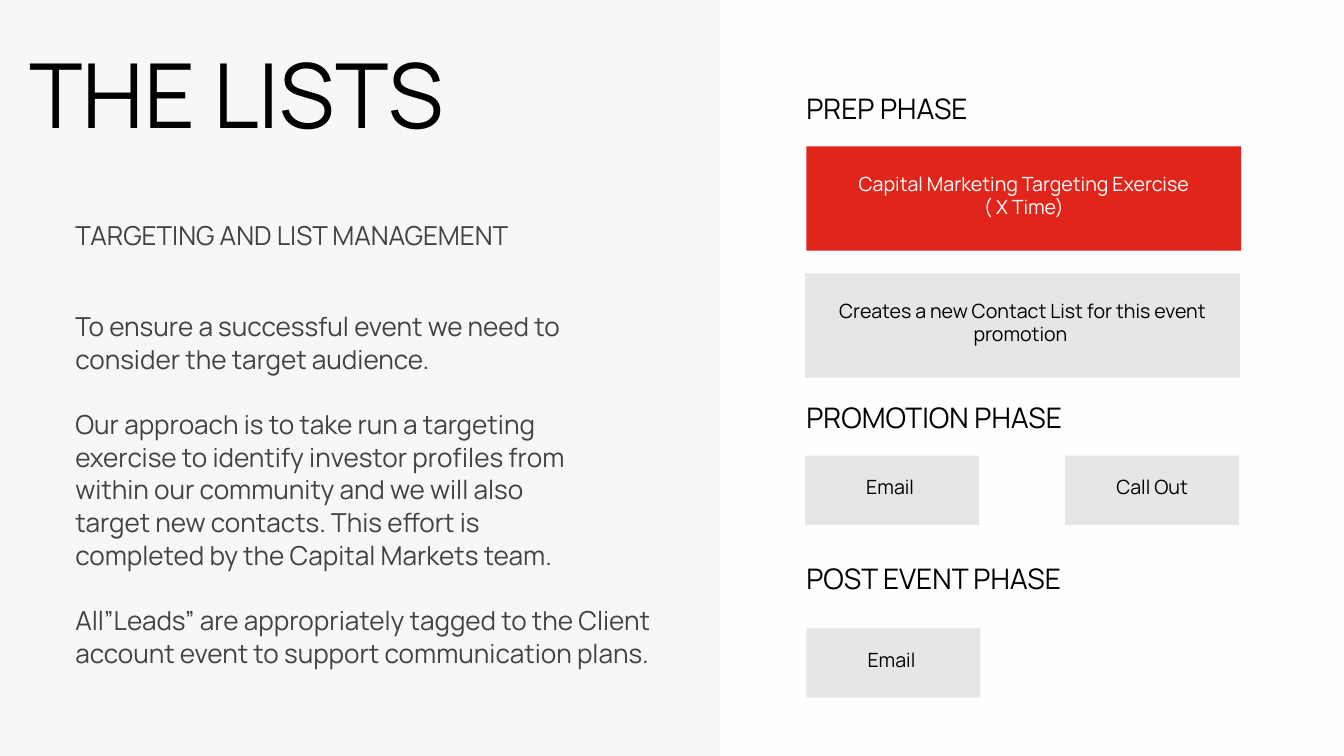
import pptx
import pptx.dml.color
import pptx.enum.shapes
import pptx.enum.text
import pptx.util

RGB = pptx.dml.color.RGBColor
ALIGN = pptx.enum.text.PP_ALIGN
ANCHOR = pptx.enum.text.MSO_ANCHOR

BACKGROUND = RGB(0xFE, 0xFE, 0xFE)
PANEL = RGB(0xF7, 0xF7, 0xF7)
RED = RGB(0xE1, 0x25, 0x1B)
GRAY = RGB(0xE6, 0xE6, 0xE6)
BLACK = RGB(0, 0, 0)
CHARCOAL = RGB(0x42, 0x42, 0x40)
WHITE = RGB(0xFF, 0xFF, 0xFF)

FONT = "Manrope"
WIDTH = pptx.util.Inches(20)
HEIGHT = pptx.util.Inches(11.25)

COPY_LEFT, COPY_WIDTH = 5.6, 43.05
PHASE_LEFT, PHASE_WIDTH = 60, 31.15
WIDE_STEP = (32.35, 13.78)
SMALL_STEP = (12.95, 9.16)

AUDIENCE = [
    "To ensure a successful event we need to\vconsider the target audience.",
    "Our approach is to take run a targeting\v"
    "exercise to identify investor profiles from\v"
    "within our community and we will also\v"
    "target new contacts. This effort is\v"
    "completed by the Capital Markets team.",
    "All”Leads” are appropriately tagged to the Client "
    "account event to support communication plans.",
]
PHASES = [("PREP PHASE", 10.93), ("PROMOTION PHASE", 51.82), ("POST EVENT PHASE", 73.16)]
STEPS = [
    (["Capital Marketing Targeting Exercise", "( X Time)"], 60, 19.38, WIDE_STEP, RED, WHITE),
    (["Creates a new Contact List for this event promotion "], 59.9, 36.18, WIDE_STEP, GRAY, BLACK),
    (["Email "], 59.9, 60.27, SMALL_STEP, GRAY, BLACK),
    (["Call Out"], 79.25, 60.27, SMALL_STEP, GRAY, BLACK),
    (["Email "], 60, 83.11, SMALL_STEP, GRAY, BLACK),
]


def place(left, top, width, height):
    return (int(WIDTH * left / 100), int(HEIGHT * top / 100),
            int(WIDTH * width / 100), int(HEIGHT * height / 100))


def write(frame, paragraphs, size, leading, color, align=ALIGN.LEFT,
          anchor=ANCHOR.TOP, gap=0, bottom=0):
    frame.word_wrap = True
    frame.vertical_anchor = anchor
    frame.margin_left = frame.margin_right = frame.margin_top = 0
    frame.margin_bottom = pptx.util.Inches(bottom)
    for index, words in enumerate(paragraphs):
        paragraph = frame.add_paragraph() if index else frame.paragraphs[0]
        paragraph.text = words
        paragraph.alignment = align
        paragraph.line_spacing = pptx.util.Pt(leading)
        paragraph.space_before = pptx.util.Pt(gap if index else 0)
        for run in paragraph.runs:
            run.font.name = FONT
            run.font.size = pptx.util.Pt(size)
            run.font.color.rgb = color


def add_block(slide, area, fill):
    block = slide.shapes.add_shape(pptx.enum.shapes.MSO_SHAPE.RECTANGLE, *place(*area))
    block.shadow.inherit = False
    block.fill.solid()
    block.fill.fore_color.rgb = fill
    block.line.fill.background()
    return block


def add_copy(slide, area, paragraphs, size, leading, color, **style):
    copy_box = slide.shapes.add_textbox(*place(*area))
    write(copy_box.text_frame, paragraphs, size, leading, color, **style)


def add_step(slide, words, left, top, step_size, fill, color):
    step = add_block(slide, (left, top, *step_size), fill)
    write(step.text_frame, words, 21, 25.2, color,
          align=ALIGN.CENTER, anchor=ANCHOR.MIDDLE, bottom=0.1)


def main():
    deck = pptx.Presentation()
    deck.slide_width, deck.slide_height = WIDTH, HEIGHT
    slide = deck.slides.add_slide(deck.slide_layouts[6])
    slide.background.fill.solid()
    slide.background.fill.fore_color.rgb = BACKGROUND

    add_block(slide, (0, 0, 53.55, 100), PANEL)
    add_copy(slide, (2.2, 6.31, 51.35, 14.13), ["THE LISTS"], 96, 105.6, BLACK)
    add_copy(slide, (COPY_LEFT, 28.8, COPY_WIDTH, 4.36),
             ["TARGETING AND LIST MANAGEMENT"], 28, 35, CHARCOAL)
    add_copy(slide, (COPY_LEFT, 40.89, COPY_WIDTH, 51.4), AUDIENCE, 28, 35, CHARCOAL, gap=35)

    for phase, top in PHASES:
        add_copy(slide, (PHASE_LEFT, top, PHASE_WIDTH, 5.6), [phase],
                 30.3, 45.5, BLACK, align=ALIGN.JUSTIFY)
    for step in STEPS:
        add_step(slide, *step)

    deck.save("out.pptx")


if __name__ == "__main__":
    main()
